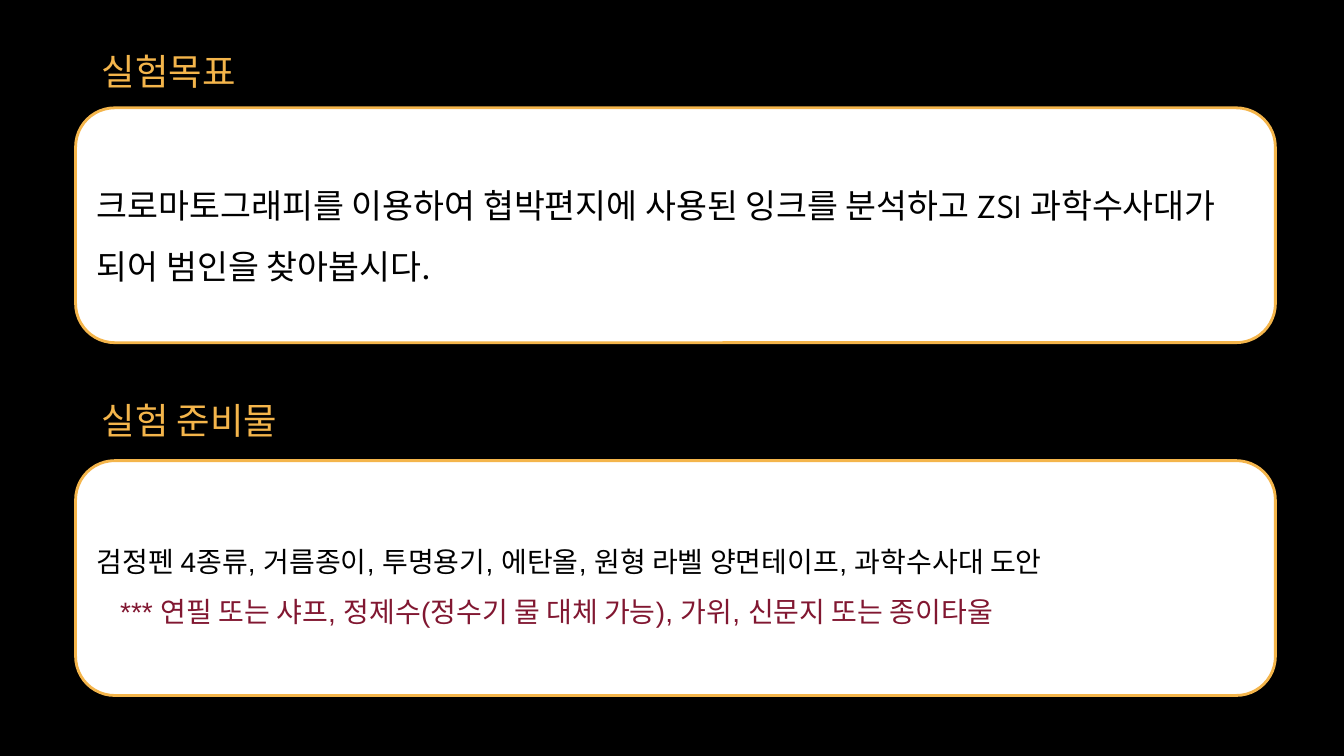
"""Build the experiment goal and materials slide."""
from dataclasses import dataclass

from pptx import Presentation
from pptx.dml.color import RGBColor
from pptx.enum.shapes import MSO_SHAPE
from pptx.enum.text import MSO_ANCHOR, MSO_AUTO_SIZE, PP_ALIGN
from pptx.slide import Slide
from pptx.text.text import TextFrame
from pptx.util import Inches, Pt

COLORS = {"night": "000000", "card": "FFFFFF", "gold": "F4B54B",
          "ink": "000000", "wine": "811731"}
HEADING_FONT = "League Spartan"


@dataclass(frozen=True)
class Line:
    """One paragraph with its look."""

    text: str
    size: float
    font: str
    color: str
    spacing: float = 1.0
    indent: float = 0.0


@dataclass(frozen=True)
class Section:
    """A heading above a rounded card."""

    heading: str
    heading_top: float
    heading_width: float
    card_top: float
    lines: tuple[Line, ...]


SECTIONS = (
    Section("실험목표", 0.39, 1.96, 1.07, (
        Line("크로마토그래피를 이용하여 협박편지에 사용된 잉크를 분석하고 ZSI 과학수사대가 되어 범인을 찾아봅시다.",
             24, HEADING_FONT, "ink", 1.5),
    )),
    Section("실험 준비물", 3.85, 2.3, 4.57, (
        Line("검정펜 4종류, 거름종이, 투명용기, 에탄올, 원형 라벨 양면테이프, 과학수사대 도안",
             20, "Arial", "ink", 1.5),
        Line("*** 연필 또는 샤프, 정제수(정수기 물 대체 가능), 가위, 신문지 또는 종이타울",
             20, "Arial", "wine", 1.5, 0.23),
    )),
)


def color(name: str) -> RGBColor:
    """Look up a palette color."""
    return RGBColor.from_string(COLORS[name])


def write(frame: TextFrame, lines: tuple[Line, ...], anchor: MSO_ANCHOR) -> None:
    """Fill a text frame with left-aligned lines."""
    frame.word_wrap = True
    frame.auto_size = MSO_AUTO_SIZE.NONE
    frame.vertical_anchor = anchor
    for index, line in enumerate(lines):
        paragraph = frame.add_paragraph() if index else frame.paragraphs[0]
        paragraph.alignment = PP_ALIGN.LEFT
        paragraph.line_spacing = line.spacing
        if line.indent:
            paragraph._p.get_or_add_pPr().set("marL", str(Inches(line.indent)))
        run = paragraph.add_run()
        run.text = line.text
        run.font.size = Pt(line.size)
        run.font.name = line.font
        run.font.color.rgb = color(line.color)


def draw_heading(slide: Slide, section: Section, is_title: bool) -> None:
    """Place a heading, using the title placeholder for the first one."""
    bounds = (Inches(0.91), Inches(section.heading_top),
              Inches(section.heading_width), Inches(0.48))
    heading = slide.shapes.title if is_title else slide.shapes.add_textbox(*bounds)
    heading.left, heading.top, heading.width, heading.height = bounds
    frame = heading.text_frame
    frame.margin_left = frame.margin_right = Inches(0.1)
    frame.margin_top = frame.margin_bottom = Inches(0.1)
    write(frame, (Line(section.heading, 26, HEADING_FONT, "gold"),), MSO_ANCHOR.TOP)


def draw_card(slide: Slide, section: Section) -> None:
    """Draw the rounded card with its text."""
    card = slide.shapes.add_shape(MSO_SHAPE.ROUNDED_RECTANGLE, Inches(0.75),
                                  Inches(section.card_top), Inches(11.9), Inches(2.33))
    card.shadow.inherit = False
    card.fill.solid()
    card.fill.fore_color.rgb = color("card")
    card.line.color.rgb = color("gold")
    card.line.width = Pt(2)
    write(card.text_frame, section.lines, MSO_ANCHOR.MIDDLE)


def main() -> None:
    """Create and save the slide."""
    deck = Presentation()
    deck.slide_width, deck.slide_height = Inches(13.33), Inches(7.5)
    slide = deck.slides.add_slide(deck.slide_layouts.get_by_name("Title Only"))
    slide.background.fill.solid()
    slide.background.fill.fore_color.rgb = color("night")
    for index, section in enumerate(SECTIONS):
        draw_heading(slide, section, is_title=index == 0)
        draw_card(slide, section)
    deck.save("out.pptx")


if __name__ == "__main__":
    main()
